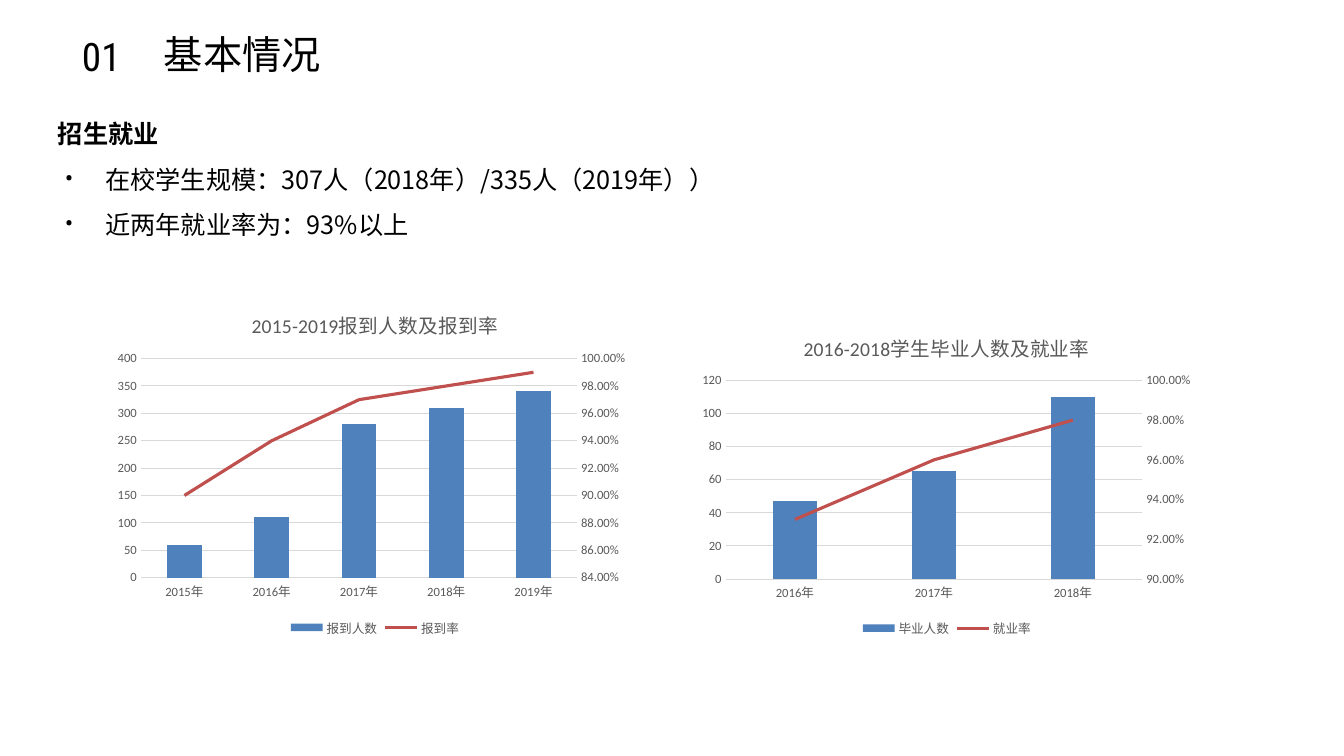
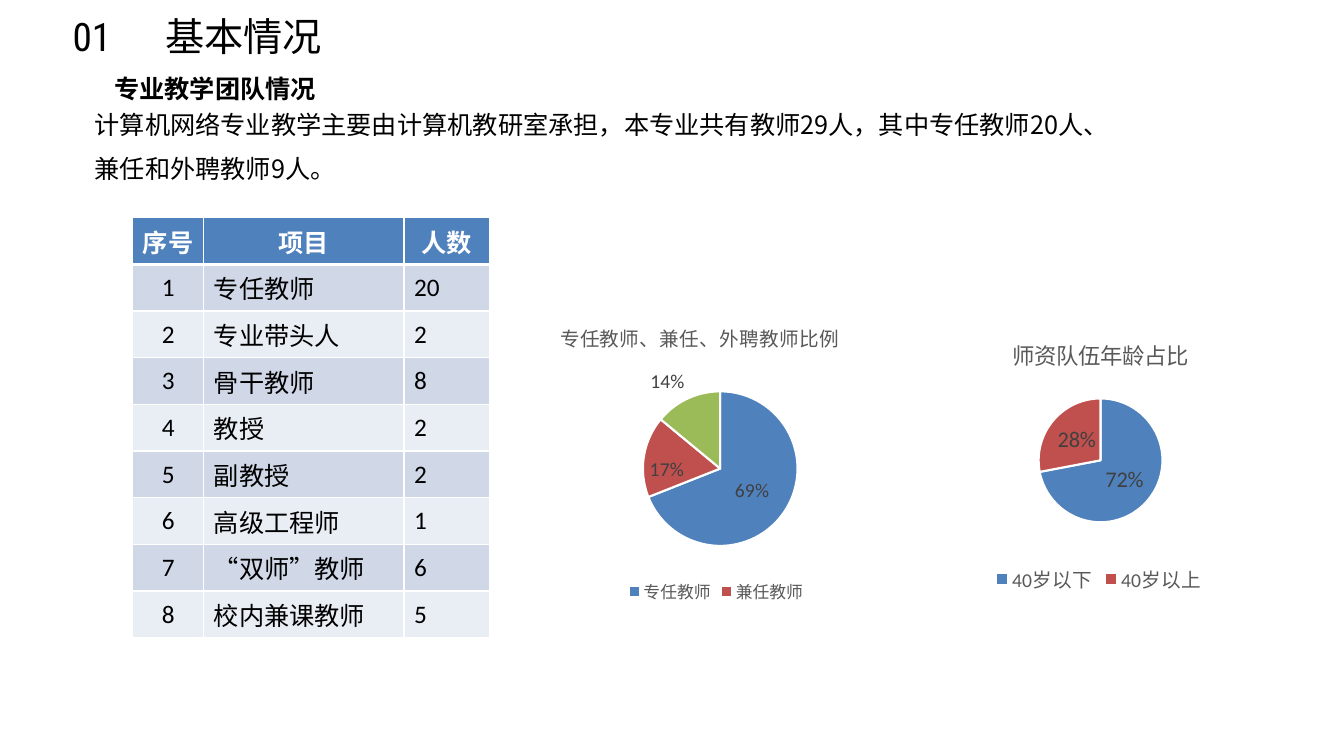
from copy import deepcopy
from dataclasses import dataclass

from pptx import Presentation
from pptx.chart.axis import ValueAxis
from pptx.chart.data import CategoryChartData
from pptx.dml.color import RGBColor
from pptx.enum.chart import XL_CHART_TYPE as ChartType
from pptx.enum.chart import XL_LABEL_POSITION as LabelPosition
from pptx.enum.chart import XL_LEGEND_POSITION as LegendPosition
from pptx.enum.chart import XL_TICK_MARK as TickMark
from pptx.enum.text import MSO_ANCHOR as Anchor
from pptx.enum.text import MSO_AUTO_SIZE as AutoSize
from pptx.enum.text import PP_ALIGN as Align
from pptx.oxml import parse_xml
from pptx.oxml.ns import nsdecls, qn
from pptx.util import Inches, Pt


@dataclass(frozen=True)
class Theme:
    """Colours, fonts and type sizes shared by the slides."""

    black: str = "000000"
    white: str = "FFFFFF"
    blue: str = "4F81BD"
    red: str = "C0504D"
    green: str = "9BBB59"
    grey: str = "595959"
    label: str = "404040"
    rule: str = "D9D9D9"
    bands: tuple = ("D0D8E8", "E9EDF4")
    chinese: str = "Noto Sans CJK SC"
    number: str = "Roboto Condensed"
    bullet: str = "Roboto"
    latin: str = "Calibri"
    title_size: int = 28
    body_size: int = 18
    chart_title_size: int = 14
    axis_size: int = 9
    body_line: float = 23.8
    body_gap: float = 8.2


THEME = Theme()
WIDTH, HEIGHT = Inches(13.33), Inches(7.5)


def place(left, top, width, height):
    """Turn percentages of the slide into left, top, width and height."""
    return (round(WIDTH * left / 100), round(HEIGHT * top / 100),
            round(WIDTH * width / 100), round(HEIGHT * height / 100))


def style_font(font, size, color, name=THEME.latin, bold=False):
    """Set size, colour, typeface and weight of a font."""
    font.size, font.name, font.bold = Pt(size), name, bold
    font.color.rgb = RGBColor.from_string(color)


def style_run(run, size, color, name, bold=False):
    """Format a run, with the Chinese typeface for East Asian text."""
    style_font(run.font, size, color, name, bold)
    run._r.get_or_add_rPr().append(
        parse_xml(f'<a:ea {nsdecls("a")} typeface="{THEME.chinese}"/>'))


def fill_text(shape, lines, size, line_height, name=THEME.chinese, bold=False):
    """Write paragraphs into a frame that has no insets."""
    frame = shape.text_frame
    frame.text = "\n".join(lines)
    frame.word_wrap, frame.auto_size = True, AutoSize.NONE
    frame.vertical_anchor = Anchor.TOP
    frame.margin_left = frame.margin_top = frame.margin_right = frame.margin_bottom = 0
    for index, paragraph in enumerate(frame.paragraphs):
        paragraph.alignment = Align.LEFT
        paragraph.line_spacing = Pt(line_height)
        paragraph.space_before = Pt(THEME.body_gap if index else 0)
        style_run(paragraph.runs[0], size, THEME.black, name, bold)
    return frame


def add_text(slide, box, lines, size=THEME.body_size, line_height=THEME.body_line, **style):
    """Add a text box."""
    return fill_text(slide.shapes.add_textbox(*place(*box)), lines, size, line_height, **style)


def add_bullets(slide, box, lines):
    """Add a bulleted list with a hanging indent."""
    for paragraph in add_text(slide, box, lines).paragraphs:
        properties = paragraph._p.get_or_add_pPr()
        properties.set("marL", str(Inches(0.47)))
        properties.set("indent", str(-Inches(0.4)))
        for tag in (f'buFont {nsdecls("a")} typeface="{THEME.bullet}"',
                    f'buChar {nsdecls("a")} char="•"'):
            properties.append(parse_xml(f"<a:{tag}/>"))


def add_titled_slide(presentation, number_at, title_at):
    """Add a slide with the section number and title."""
    slide = presentation.slides.add_slide(presentation.slide_layouts[5])
    title = slide.shapes.title
    title.left, title.top, title.width, title.height = place(*title_at, 16, 12.9)
    fill_text(title, ["基本情况"], THEME.title_size, 28)
    add_text(slide, (*number_at, 6.2, 13.6), ["01"], THEME.title_size, 31.4, name=THEME.number)
    return slide


def set_layout(element, position, **shares):
    """Fix a chart part at shares of the chart's size."""
    for old in element.findall(qn("c:layout")):
        element.remove(old)
    target = '<c:layoutTarget val="inner"/>' if "w" in shares else ""
    modes = "".join(f'<c:{key}Mode val="edge"/>' for key in "xy")
    values = "".join(f'<c:{key} val="{value}"/>' for key, value in shares.items())
    element.insert(position, parse_xml(
        f'<c:layout {nsdecls("c")}><c:manualLayout>{target}{modes}{values}'
        "</c:manualLayout></c:layout>"))


def add_chart(slide, kind, box, title, categories, series, plot_area,
              title_size=THEME.chart_title_size, legend_size=THEME.axis_size):
    """Add a chart with its title, bottom legend and plot area."""
    data = CategoryChartData()
    data.categories = categories
    for name, values, number_format in series:
        data.add_series(name, values, number_format)
    chart = slide.shapes.add_chart(kind, *place(*box), data).chart
    style_font(chart.font, 10, THEME.black)
    chart.has_title = chart.has_legend = True
    chart.chart_title.text_frame.text = title
    style_run(chart.chart_title.text_frame.paragraphs[0].runs[0],
              title_size, THEME.grey, THEME.latin)
    chart.legend.position = LegendPosition.BOTTOM
    chart.legend.include_in_layout = False
    style_font(chart.legend.font, legend_size, THEME.grey)
    set_layout(chart._chartSpace.chart.plotArea, 0, **dict(zip("xywh", plot_area)))
    return chart


def style_axis(axis, line=None):
    """Give an axis grey labels, no ticks and an optional line."""
    axis.major_tick_mark = axis.minor_tick_mark = TickMark.NONE
    style_font(axis.tick_labels.font, THEME.axis_size, THEME.grey)
    if line:
        axis.format.line.color.rgb = RGBColor.from_string(line)
        axis.format.line.width = Pt(0.75)
    else:
        axis.format.line.fill.background()


def scale_axis(axis, low, high, step):
    """Fix the range and step of a value axis."""
    axis.minimum_scale, axis.maximum_scale, axis.major_unit = low, high, step


def move_to_right_axis(chart, series, scale):
    """Turn a column series into a line on a percentage axis at the right."""
    line = series._element
    bars = line.getparent()
    for flag in line.findall(qn("c:invertIfNegative")):
        line.remove(flag)
    line.find(qn("c:spPr")).addnext(parse_xml(
        f'<c:marker {nsdecls("c")}><c:symbol val="none"/></c:marker>'))
    for smooth in line.findall(qn("c:smooth")):
        line.remove(smooth)
    line.append(parse_xml(f'<c:smooth {nsdecls("c")} val="0"/>'))
    group = parse_xml(
        f'<c:lineChart {nsdecls("c")}><c:grouping val="standard"/><c:varyColors val="0"/>'
        '<c:marker val="1"/><c:axId val="5001"/><c:axId val="5002"/></c:lineChart>')
    group.insert(2, line)
    bars.addnext(group)

    category, value = (deepcopy(axis._element) for axis in (chart.category_axis, chart.value_axis))
    last = chart.value_axis._element
    for element, own, other in ((category, "5001", "5002"), (value, "5002", "5001")):
        element.find(qn("c:axId")).set("val", own)
        element.find(qn("c:crossAx")).set("val", other)
        last.addnext(element)
        last = element
    category.find(qn("c:delete")).set("val", "1")
    value.find(qn("c:axPos")).set("val", "r")
    value.find(qn("c:crosses")).set("val", "max")
    right = ValueAxis(value)
    right.has_major_gridlines = False
    right.tick_labels.number_format = "0.00%"
    right.tick_labels.number_format_is_linked = False
    scale_axis(right, *scale)


def add_combined_chart(slide, box, title, categories, counts, rates, plot_area,
                       left_scale, right_scale, gap, base_line=None):
    """Add columns of head counts with a line of rates."""
    chart = add_chart(slide, ChartType.COLUMN_CLUSTERED, box, title, categories,
                      [(*counts, "General"), (*rates, "0.00%")], plot_area)
    plot = chart.plots[0]
    plot.vary_by_categories, plot.gap_width = False, gap
    style_axis(chart.category_axis, base_line)
    style_axis(chart.value_axis)
    scale_axis(chart.value_axis, *left_scale)
    grid = chart.value_axis.major_gridlines.format.line
    grid.color.rgb, grid.width = RGBColor.from_string(THEME.rule), Pt(0.75)
    count, rate = plot.series
    count.format.fill.solid()
    count.format.fill.fore_color.rgb = RGBColor.from_string(THEME.blue)
    rate.format.line.color.rgb = RGBColor.from_string(THEME.red)
    rate.format.line.width = Pt(2.25)
    move_to_right_axis(chart, rate, right_scale)


def add_pie(slide, box, title, shares, positions, plot_area, title_at,
            title_size, label_size, legend_size):
    """Add a pie with percentage labels."""
    chart = add_chart(slide, ChartType.PIE, box, title, list(shares),
                      [("Series 1", list(shares.values()), "General")],
                      plot_area, title_size, legend_size)
    set_layout(chart.chart_title._element, 1, **dict(zip("xy", title_at)))
    plot = chart.plots[0]
    plot.vary_by_categories = True
    series = plot.series[0]
    labels = series.data_labels
    labels.show_percentage, labels.show_value = True, False
    style_font(labels.font, label_size, THEME.label)
    for index, (color, position) in enumerate(zip((THEME.blue, THEME.red, THEME.green), positions)):
        point = series.points[index]
        point.format.fill.solid()
        point.format.fill.fore_color.rgb = RGBColor.from_string(color)
        point.format.line.color.rgb = RGBColor.from_string(THEME.white)
        point.format.line.width = Pt(1.5)
        style_font(point.data_label.font, label_size, THEME.label)
        point.data_label.position = position
    for label in labels._element.findall(qn("c:dLbl")):
        label.find(qn("c:showVal")).set("val", "0")
        label.find(qn("c:showPercent")).set("val", "1")
    return chart


def hide_legend_entry(chart, index):
    """Leave one entry out of a legend."""
    chart.legend._element.find(qn("c:legendPos")).addnext(parse_xml(
        f'<c:legendEntry {nsdecls("c")}><c:idx val="{index}"/><c:delete val="1"/></c:legendEntry>'))


def style_cell(cell, text, fill, color, align, header):
    """Write a cell and give it a fill and white borders."""
    cell.text = text
    cell.vertical_anchor = Anchor.TOP if header else Anchor.MIDDLE
    cell.fill.solid()
    cell.fill.fore_color.rgb = RGBColor.from_string(fill)
    paragraph = cell.text_frame.paragraphs[0]
    paragraph.alignment = align
    style_run(paragraph.runs[0], THEME.body_size, color, THEME.latin, header)
    for index, side in enumerate("LRTB"):
        width = Pt(3 if header and side == "B" else 1)
        cell._tc.get_or_add_tcPr().insert(index, parse_xml(
            f'<a:ln{side} {nsdecls("a")} w="{width}"><a:solidFill>'
            f'<a:srgbClr val="{THEME.white}"/></a:solidFill></a:ln{side}>'))


def add_staff_table(slide, box, header, staff, column_shares):
    """Add a numbered table of staff counts."""
    rows = [header] + [(str(number), *entry) for number, entry in enumerate(staff, 1)]
    left, top, width, height = place(*box)
    table = slide.shapes.add_table(len(rows), len(header), left, top, width, height).table
    for column, share in zip(table.columns, column_shares):
        column.width = round(width * share)
    for r, row in enumerate(rows):
        for c, text in enumerate(row):
            fill, color = (THEME.bands[(r - 1) % 2], THEME.black) if r else (THEME.blue, THEME.white)
            align = Align.LEFT if r and c else Align.CENTER
            style_cell(table.cell(r, c), text, fill, color, align, r == 0)


def build_enrolment(presentation):
    """Build the slide on enrolment and employment."""
    slide = add_titled_slide(presentation, (6.1, 4.7), (12.2, 5.1))
    add_text(slide, (4.3, 15.3, 10.4, 9.3), ["招生就业"], bold=True)
    add_bullets(slide, (4.3, 21.3, 65.9, 10.1),
                ["在校学生规模：307人（2018年）/335人（2019年））", "近两年就业率为：93%以上"])
    add_combined_chart(
        slide, (8.1, 38.7, 39.6, 46), "2015-2019报到人数及报到率",
        [f"{year}年" for year in range(2015, 2020)],
        ("报到人数", (60, 110, 280, 310, 340)), ("报到率", (0.9, 0.94, 0.97, 0.98, 0.99)),
        (0.06, 0.19, 0.82, 0.63), (0, 400, 50), (0.84, 1, 0.02), 150)
    add_combined_chart(
        slide, (51.3, 41.7, 38.3, 43.1), "2016-2018学生毕业人数及就业率",
        [f"{year}年" for year in range(2016, 2019)],
        ("毕业人数", (47, 65, 110)), ("就业率", (0.93, 0.96, 0.98)),
        (0.07, 0.2, 0.81, 0.61), (0, 120, 20), (0.9, 1, 0.02), 219, THEME.rule)


def build_team(presentation):
    """Build the slide on the teaching team."""
    slide = add_titled_slide(presentation, (5.4, 2), (12.3, 2.7))
    add_text(slide, (8.5, 9.3, 17.9, 9.5), ["专业教学团队情况"], bold=True)
    add_text(slide, (7.05, 14, 87.7, 10.1),
             ["计算机网络专业教学主要由计算机教研室承担，本专业共有教师29人，其中专任教师20人、",
              "兼任和外聘教师9人。"])
    add_staff_table(
        slide, (9.85, 28.8, 26.6, 55.6), ("序号", "项目", "人数"),
        [("专任教师", "20"), ("专业带头人", "2"), ("骨干教师", "8"), ("教授", "2"),
         ("副教授", "2"), ("高级工程师", "1"), ("“双师”教师", "6"), ("校内兼课教师", "5")],
        (0.2, 0.56, 0.24))
    roles = add_pie(
        slide, (38.8, 39.5, 29, 40.9), "专任教师、兼任、外聘教师比例",
        {"专任教师": 69, "兼任教师": 17, "外聘教师": 14},
        (LabelPosition.CENTER, LabelPosition.INSIDE_END, LabelPosition.OUTSIDE_END),
        (0.31, 0.3, 0.4, 0.5), (0.09, 0.06), 14, 14, 12)
    hide_legend_entry(roles, 2)
    add_pie(slide, (67.7, 40.9, 28.1, 38.1), "师资队伍年龄占比",
            {"40岁以下": 72, "40岁以上": 28}, (LabelPosition.CENTER,) * 2,
            (0.34, 0.31, 0.33, 0.43), (0.26, 0.08), 16, 16, 14)


def main():
    """Build and save the presentation."""
    presentation = Presentation()
    presentation.slide_width, presentation.slide_height = WIDTH, HEIGHT
    build_enrolment(presentation)
    build_team(presentation)
    presentation.save("out.pptx")


if __name__ == "__main__":
    main()
